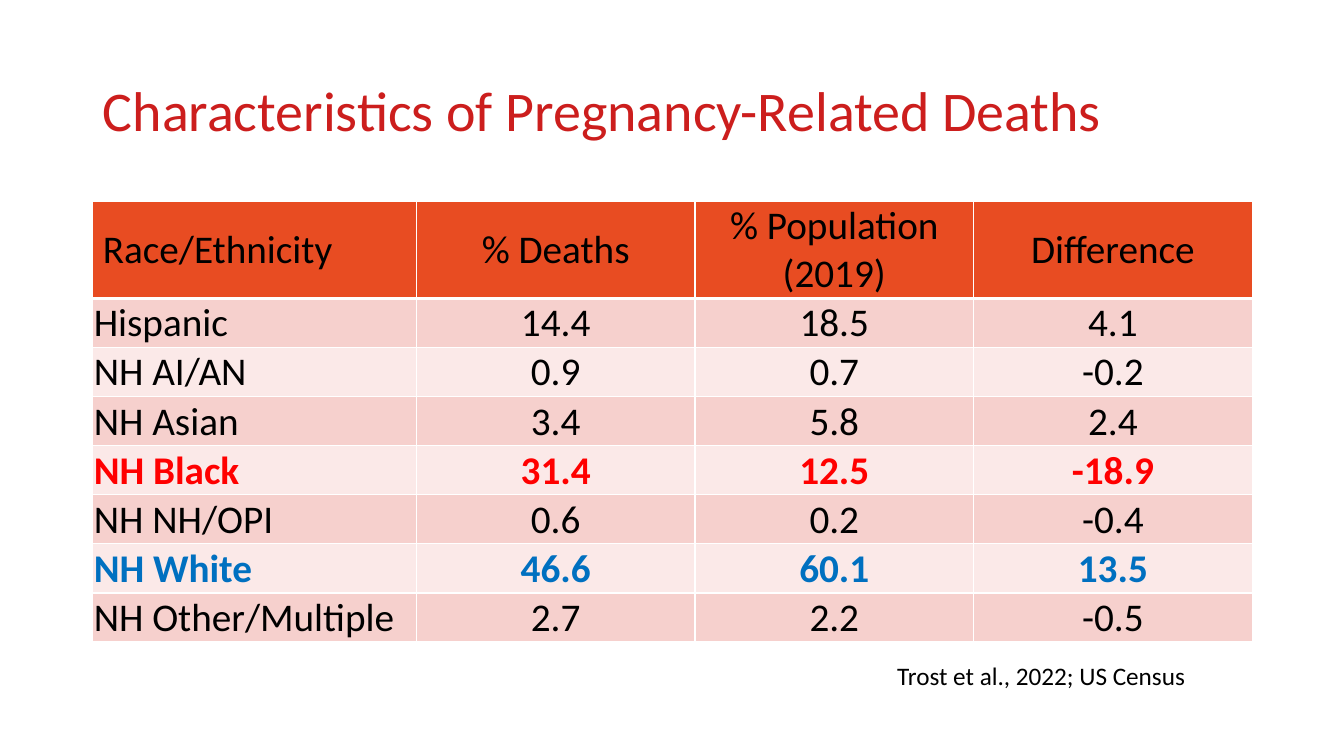
from dataclasses import dataclass

from lxml import etree
from pptx import Presentation
from pptx.dml.color import RGBColor
from pptx.enum.text import MSO_ANCHOR, MSO_AUTO_SIZE, PP_ALIGN
from pptx.oxml.ns import qn
from pptx.util import Inches, Pt

LEFT, CENTER = PP_ALIGN.LEFT, PP_ALIGN.CENTER
MIDDLE = MSO_ANCHOR.MIDDLE
NO_FIT = MSO_AUTO_SIZE.NONE


@dataclass(frozen=True)
class Theme:
    font: str = "Calibri"
    title: str = "CC1E1D"
    text: str = "000000"
    header: str = "E84C22"
    bands: tuple = ("F6D0CD", "FBE9E8")
    border: str = "FFFFFF"
    title_size: int = 40
    table_size: int = 28
    source_size: int = 18


THEME = Theme()
HIGHLIGHTS = {"NH Black": "FF0000", "NH White": "0070C0"}
HEADER = ("Race/Ethnicity", "% Deaths", "% Population\n(2019)", "Difference")
ROWS = (
    ("Hispanic", "14.4", "18.5", "4.1"),
    ("NH AI/AN", "0.9", "0.7", "-0.2"),
    ("NH Asian", "3.4", "5.8", "2.4"),
    ("NH Black", "31.4", "12.5", "-18.9"),
    ("NH NH/OPI", "0.6", "0.2", "-0.4"),
    ("NH White", "46.6", "60.1", "13.5"),
    ("NH Other/Multiple", "2.7", "2.2", "-0.5"),
)


def add_run(p, text, size, color, bold=False):
    r = p.add_run()
    r.text = text
    r.font.name = THEME.font
    r.font.size = Pt(size)
    r.font.bold = bold
    r.font.color.rgb = RGBColor.from_string(color)


def set_borders(cell, top, bottom):
    tc_pr = cell._tc.get_or_add_tcPr()
    for side, width in (("L", 1), ("R", 1), ("T", top), ("B", bottom)):
        ln = etree.SubElement(tc_pr, qn(f"a:ln{side}"), w=str(Pt(width)))
        fill = etree.SubElement(ln, qn("a:solidFill"))
        etree.SubElement(fill, qn("a:srgbClr"), val=THEME.border)


def fill_cell(cell, text, align, fill, color, bold, top, bottom):
    set_borders(cell, top, bottom)
    cell.fill.solid()
    cell.fill.fore_color.rgb = RGBColor.from_string(fill)
    cell.vertical_anchor = MIDDLE
    cell.margin_left = cell.margin_right = cell.margin_top = Inches(0.01)
    cell.margin_bottom = 0
    tf = cell.text_frame
    for i, line in enumerate(text.split("\n")):
        p = tf.add_paragraph() if i else tf.paragraphs[0]
        p.alignment = align
        add_run(p, line, THEME.table_size, color, bold)


def add_title(s, x, y, w, h):
    sp = s.shapes.title
    sp.left, sp.top, sp.width, sp.height = map(Inches, (x, y, w, h))
    tf = sp.text_frame
    tf.auto_size = NO_FIT
    tf.word_wrap = True
    tf.vertical_anchor = MIDDLE
    p = tf.paragraphs[0]
    p.alignment = LEFT
    p.line_spacing = 0.9
    add_run(p, "Characteristics of Pregnancy-Related Deaths", THEME.title_size, THEME.title)


def add_deaths_table(s, x, y, w, h):
    first_w, header_h = 3.21, 0.96
    value_w = (w - first_w) / (len(HEADER) - 1)
    row_h = (h - header_h) / len(ROWS)
    table = s.shapes.add_table(
        len(ROWS) + 1, len(HEADER), *map(Inches, (x, y, w, h))
    ).table
    for i, col in enumerate(table.columns):
        col.width = Inches(value_w if i else first_w)
    for i, row in enumerate(table.rows):
        row.height = Inches(row_h if i else header_h)

    for i, values in enumerate((HEADER, *ROWS)):
        fill = THEME.bands[(i - 1) % 2] if i else THEME.header
        bold = values[0] in HIGHLIGHTS
        color = HIGHLIGHTS.get(values[0], THEME.text)
        top, bottom = (3 if i == 1 else 1), (1 if i else 3)
        for j, text in enumerate(values):
            align = CENTER if j else LEFT
            fill_cell(table.cell(i, j), text, align, fill, color, bold, top, bottom)
    table.cell(0, 0).margin_left = Inches(0.1)


def add_source(s, x, y, w, h):
    tf = s.shapes.add_textbox(*map(Inches, (x, y, w, h))).text_frame
    tf.word_wrap = True
    add_run(tf.paragraphs[0], "Trost et al., 2022; US Census", THEME.source_size, THEME.text)


def main():
    prs = Presentation()
    prs.slide_width, prs.slide_height = Inches(13.33), Inches(7.5)
    s = prs.slides.add_slide(prs.slide_layouts[5])
    add_title(s, 0.92, 0.4, 11.5, 1.45)
    add_deaths_table(s, 0.92, 2, 11.5, 4.37)
    add_source(s, 8.8, 6.5, 3.62, 0.4)
    prs.save("out.pptx")


if __name__ == "__main__":
    main()
